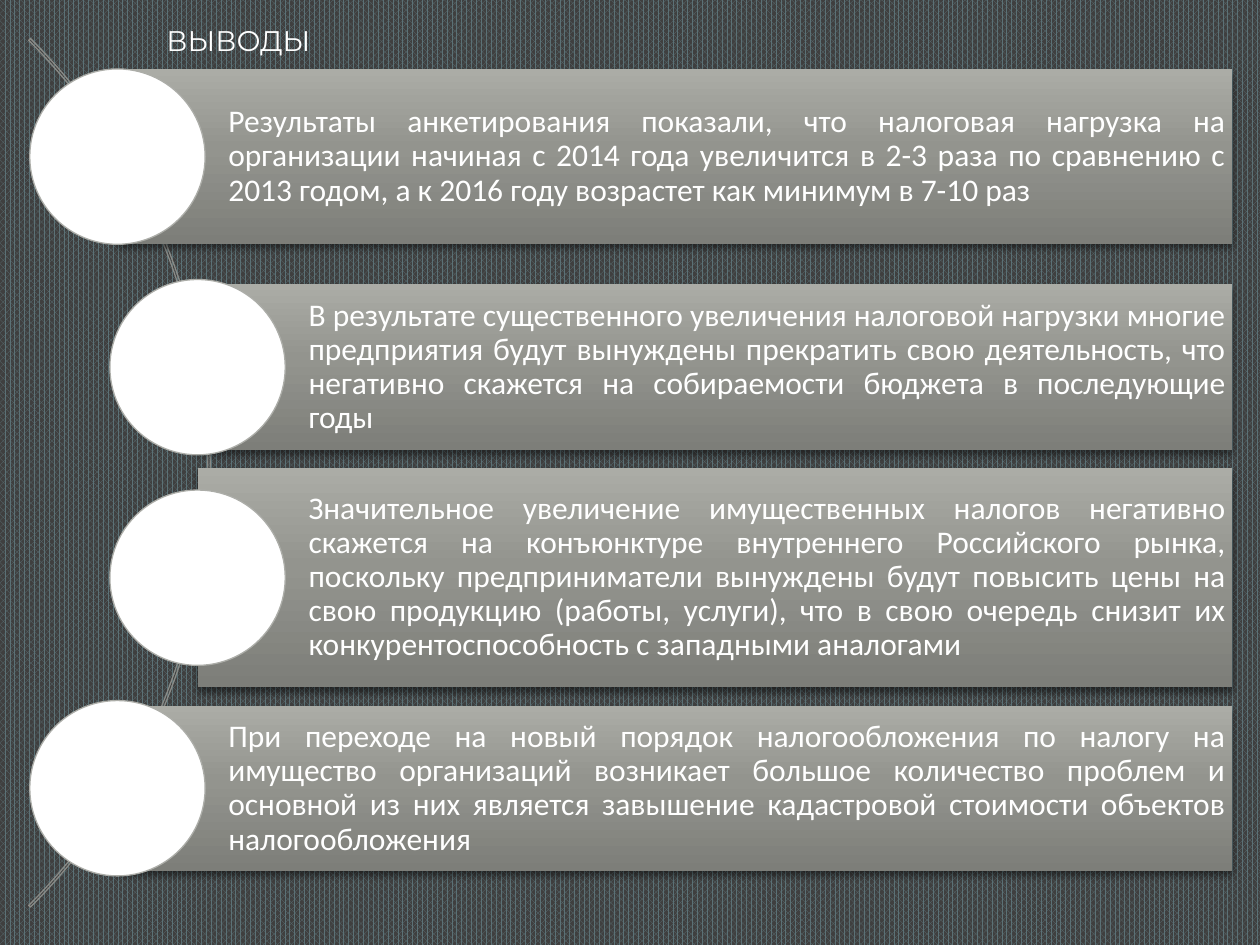
from copy import deepcopy
from dataclasses import dataclass

from lxml import etree
from pptx import Presentation
from pptx.dml.color import RGBColor
from pptx.enum.dml import MSO_PATTERN
from pptx.enum.shapes import MSO_SHAPE
from pptx.enum.text import MSO_ANCHOR, PP_ALIGN
from pptx.oxml.ns import qn
from pptx.util import Pt

RECT, OVAL, ARC = MSO_SHAPE.RECTANGLE, MSO_SHAPE.OVAL, MSO_SHAPE.BLOCK_ARC
MIDDLE, JUSTIFY = MSO_ANCHOR.MIDDLE, PP_ALIGN.JUSTIFY
DOTS = MSO_PATTERN.PERCENT_75


@dataclass
class Theme:
    weave: str = "5B7176"
    back: str = "3F3F3F"
    white: str = "FFFFFF"
    arc: str = "8A8B87"
    rim: str = "ACADA8"
    shade: str = "000000"
    stops: tuple = ((0, "7D7E79"), (0.55, "93948E"), (1, "ABACA6"))
    head: tuple = ("Montserrat", 16.2)
    body: tuple = ("Calibri", 18)
    line: float = 0.75


def rgb(code):
    return RGBColor.from_string(code)


class Deck:
    """Draws styled elements on the current slide."""

    def __init__(self, theme, wide, high):
        self.theme = theme
        self.file = Presentation()
        self.file.slide_width, self.file.slide_height = Pt(wide), Pt(high)
        self.slide = self.file.slides.add_slide(self.file.slide_layouts[6])
        fill = self.slide.background.fill
        fill.patterned()
        fill.pattern = DOTS
        fill.fore_color.rgb = rgb(theme.weave)
        fill.back_color.rgb = rgb(theme.back)

    def shape(self, kind, *box):
        item = self.slide.shapes.add_shape(kind, *map(Pt, box))
        item.shadow.inherit = False
        return item

    def edge(self, item, color):
        item.line.color.rgb = rgb(color)
        item.line.width = Pt(self.theme.line)

    def arc(self, left, top, size):
        item = self.shape(ARC, left, top, size, size)
        for i, value in enumerate((189, 27, 0.002)):
            item.adjustments[i] = value
        item.fill.background()
        self.edge(item, self.theme.arc)

    def disc(self, left, top, size):
        item = self.shape(OVAL, left, top, size, size)
        item.fill.solid()
        item.fill.fore_color.rgb = rgb(self.theme.white)
        self.edge(item, self.theme.rim)

    def label(self, frame, text, style):
        frame.word_wrap = True
        frame.vertical_anchor = MIDDLE
        frame.text = text
        font = frame.paragraphs[0].runs[0].font
        font.name, font.size = style[0], Pt(style[1])
        font.color.rgb = rgb(self.theme.white)

    def shade(self, item):
        effect = item.element.spPr.find(qn("a:effectLst"))
        outer = etree.SubElement(effect, qn("a:outerShdw"), blurRad=str(Pt(4)),
                                 dist=str(Pt(2)), dir="5400000", rotWithShape="0")
        color = etree.SubElement(outer, qn("a:srgbClr"), val=self.theme.shade)
        etree.SubElement(color, qn("a:alpha"), val="44000")

    def bar(self, text, *box):
        item = self.shape(RECT, *box)
        item.fill.gradient()
        item.fill.gradient_angle = 90
        group = item.element.spPr.find(".//" + qn("a:gsLst"))
        group.append(deepcopy(group[0]))
        for stop, (place, color) in zip(item.fill.gradient_stops, self.theme.stops):
            stop.position = place
            stop.color.rgb = rgb(color)
        item.line.fill.background()
        self.shade(item)
        frame = item.text_frame
        frame.margin_left = Pt(63.4)
        frame.margin_right = frame.margin_top = frame.margin_bottom = Pt(3.6)
        self.label(frame, text, self.theme.body)
        para = frame.paragraphs[0]
        para.alignment = JUSTIFY
        para.line_spacing = 0.9
        para.space_after = Pt(6.3)

    def title(self, text, *box):
        item = self.slide.shapes.add_textbox(*map(Pt, box))
        self.label(item.text_frame, text, self.theme.head)

    def save(self):
        self.file.save("out.pptx")


POINTS = (
    (17, 39.6, 100, "Результаты анкетирования показали, что налоговая нагрузка на организации "
     "начиная с 2014 года увеличится в 2-3 раза по сравнению с 2013 годом, "
     "а к 2016 году возрастет как минимум в 7-10 раз"),
    (62.8, 162.2, 95, "В результате существенного увеличения налоговой нагрузки многие "
     "предприятия будут вынуждены прекратить свою деятельность, что негативно "
     "скажется на собираемости бюджета в последующие годы"),
    (62.8, 267.4, 125.4, "Значительное увеличение имущественных налогов негативно скажется на "
     "конъюнктуре внутреннего Российского рынка, поскольку предприниматели вынуждены "
     "будут повысить цены на свою продукцию (работы, услуги), что в свою очередь "
     "снизит их конкурентоспособность с западными аналогами"),
    (17, 403.6, 94.2, "При переходе на новый порядок налогообложения по налогу на имущество "
     "организаций возникает большое количество проблем и основной из них является "
     "завышение кадастровой стоимости объектов налогообложения"),
)
SIZE, STEP, FIRST, RIGHT = 100.2, 120.3, 39.4, 704


def main():
    deck = Deck(Theme(), 720, 540)
    deck.arc(-581.8, -80.8, 702)
    for i, (left, top, high, text) in enumerate(POINTS):
        start = left + SIZE / 2
        deck.bar(text, start, top, RIGHT - start, high)
        deck.disc(left, FIRST + i * STEP, SIZE)
    deck.title("ВЫВОДЫ", 88, 9.2, 108, 28)
    deck.save()


if __name__ == "__main__":
    main()
